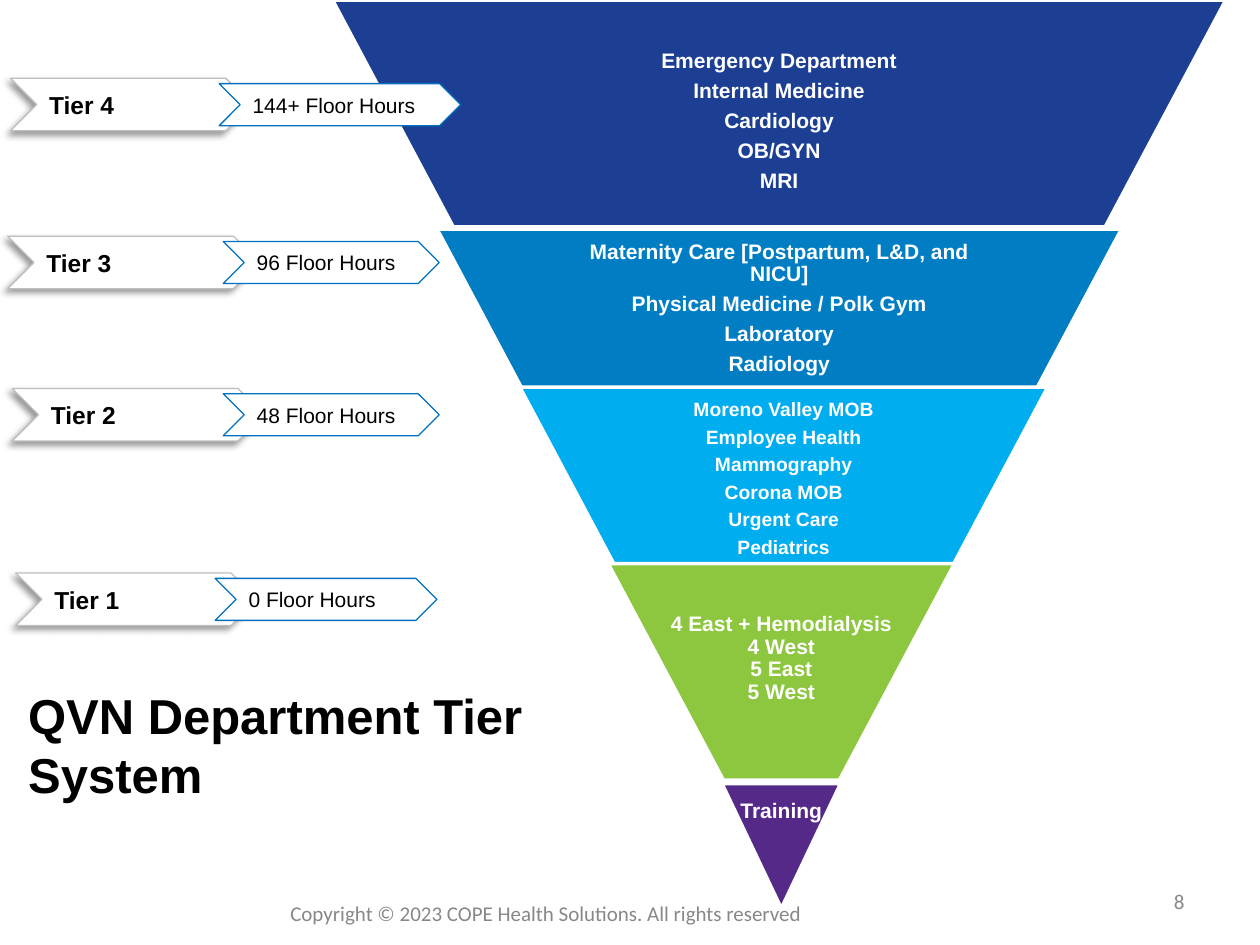
from pptx import Presentation
from pptx.dml.color import RGBColor
from pptx.enum.shapes import MSO_SHAPE as SHAPE
from pptx.enum.text import MSO_ANCHOR as ANCHOR, PP_ALIGN as ALIGN
from pptx.oxml import parse_xml
from pptx.oxml.ns import nsdecls, qn
from pptx.util import Pt

NAVY = RGBColor(0x1C, 0x3F, 0x94)
BLUE = RGBColor(0x00, 0x7D, 0xC3)
SKY = RGBColor(0x00, 0xAE, 0xEF)
GREEN = RGBColor(0x8D, 0xC6, 0x3F)
PURPLE = RGBColor(0x55, 0x29, 0x88)
OUTLINE = RGBColor(0x00, 0x70, 0xC0)
SILVER = RGBColor(0xBF, 0xBF, 0xBF)
GRAY = RGBColor(0x88, 0x88, 0x88)
WHITE = RGBColor(0xFF, 0xFF, 0xFF)
BLACK = RGBColor(0, 0, 0)

SHADOW = (
    f'<a:effectLst {nsdecls("a")}><a:outerShdw blurRad="{Pt(4)}" dist="{Pt(3)}" '
    'dir="8100000" algn="tr" rotWithShape="0"><a:srgbClr val="000000">'
    '<a:alpha val="40000"/></a:srgbClr></a:outerShdw></a:effectLst>'
)

prs = Presentation()
prs.slide_width, prs.slide_height = Pt(720), Pt(540)
slide = prs.slides.add_slide(prs.slide_layouts[6])


def add_shape(kind, left, top, width, height, fill, line, line_width):
    sp = slide.shapes.add_shape(kind, Pt(left), Pt(top), Pt(width), Pt(height))
    sp.shadow.inherit = False
    sp.fill.solid()
    sp.fill.fore_color.rgb = fill
    sp.line.color.rgb = line
    sp.line.width = Pt(line_width)
    return sp


def add_text(lines, box=None, sp=None, size=12, color=BLACK, bold=False, font="Arial",
             align=ALIGN.LEFT, anchor=ANCHOR.MIDDLE, spacing=1.0, before=0, inset=7.2):
    """Write one paragraph per line into sp, or into a new text box at box."""
    if sp is None:
        sp = slide.shapes.add_textbox(*(Pt(v) for v in box))
    tf = sp.text_frame
    tf.word_wrap = True
    tf.vertical_anchor = anchor
    tf.margin_left = tf.margin_right = Pt(inset)
    tf.margin_top = tf.margin_bottom = Pt(min(inset, 3.6))
    for i, line in enumerate(lines):
        p = tf.paragraphs[0] if i == 0 else tf.add_paragraph()
        p.alignment = align
        p.line_spacing = spacing
        if i:
            p.space_before = Pt(before)
        r = p.add_run()
        r.text = line
        r.font.name, r.font.size, r.font.bold = font, Pt(size), bold
        r.font.color.rgb = color


# Inverted pyramid: left, top, width, height, fill, departments,
# text width, text shift down, size, line spacing, space before
bands = [
    (190, 0, 510.5, 129.6, NAVY,
     ["Emergency Department", "Internal Medicine", "Cardiology", "OB/GYN", "MRI"],
     332, 5, 12, 0.9, 4.2),
    (249.8, 131, 391, 90.7, BLUE,
     ["Maternity Care [Postpartum, L&D, and NICU]", "Physical Medicine / Polk Gym",
      "Laboratory", "Radiology"],
     254, 0, 12, 0.9, 4.2),
    (297, 221.2, 301.7, 103.7, SKY,
     ["Moreno Valley MOB", "Employee Health", "Mammography", "Corona MOB",
      "Urgent Care", "Pediatrics"],
     196, 0, 11, 1.0, 2.5),
    (347.5, 322, 198, 123.8, GREEN,
     ["4 East + Hemodialysis", "4 West", "5 East", "5 West"],
     129, -7.5, 12, 0.9, 0),
    (412.6, 447.8, 67.7, 71.3, PURPLE, ["Training"], 60, -20.5, 12, 1.0, 0),
]
for left, top, width, height, fill, names, text_w, shift, size, spacing, before in bands:
    sp = add_shape(SHAPE.TRAPEZOID, left, top, width, height, fill, WHITE, 2)
    sp.rotation = 180
    sp.adjustments[0] = 0.5 if fill == PURPLE else 0.532
    text_left = left + (width - text_w) / 2
    add_text(names, box=(text_left, top + shift, text_w, height), size=size, color=WHITE,
             bold=True, align=ALIGN.CENTER, spacing=spacing, before=before, inset=1.2)

add_text(["QVN Department Tier System"], box=(9, 388, 384, 75), size=28, bold=True,
         anchor=ANCHOR.TOP)

# Tier label and hours: top, label left and width, hours left and width
tiers = [
    ("Tier 4", "144+ Floor Hours", 44.8, 6, 138, 125.3, 138),
    ("Tier 3", "96 Floor Hours", 135, 4.4, 144, 127.6, 123.4),
    ("Tier 2", "48 Floor Hours", 222, 7, 144, 127.6, 123.4),
    ("Tier 1", "0 Floor Hours", 327.5, 9, 138, 123, 126.7),
]
for label, hours, top, label_left, label_w, hours_left, hours_w in tiers:
    sp = add_shape(SHAPE.CHEVRON, label_left, top, label_w, 30, WHITE, SILVER, 0.75)
    sppr = sp.element.spPr
    sppr.replace(sppr.find(qn("a:effectLst")), parse_xml(SHADOW))
    add_text([label], sp=sp, size=14, bold=True)
    sp = add_shape(SHAPE.CHEVRON, hours_left, top + 3, hours_w, 24, WHITE, OUTLINE, 0.75)
    add_text([hours], sp=sp)

add_text(["Copyright © 2023 COPE Health Solutions. All rights reserved"],
         box=(147, 507.3, 330, 28.8), font="Calibri", color=GRAY, align=ALIGN.CENTER)
add_text(["8"], box=(516, 500.5, 168, 28.8), font="Calibri", color=GRAY, align=ALIGN.RIGHT)

prs.save("out.pptx")
